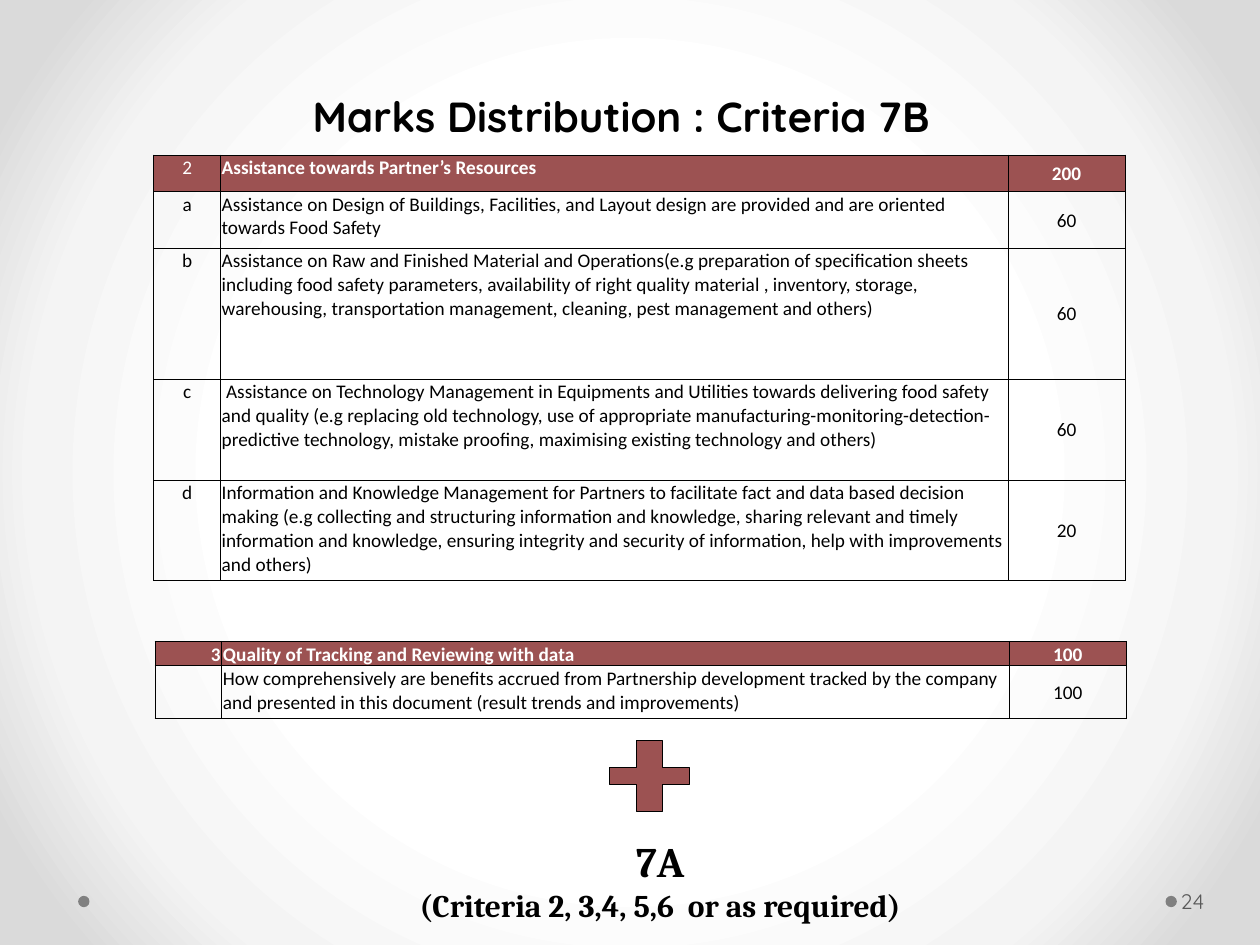
from dataclasses import dataclass
from typing import Optional

from lxml import etree
from pptx import Presentation
from pptx.dml.color import RGBColor
from pptx.enum.shapes import MSO_SHAPE
from pptx.enum.text import MSO_ANCHOR, MSO_AUTO_SIZE, PP_ALIGN
from pptx.oxml import parse_xml
from pptx.oxml.ns import nsdecls
from pptx.util import Inches, Pt

LEFT, CENTER, RIGHT = PP_ALIGN.LEFT, PP_ALIGN.CENTER, PP_ALIGN.RIGHT
TOP, MIDDLE, BOTTOM = MSO_ANCHOR.TOP, MSO_ANCHOR.MIDDLE, MSO_ANCHOR.BOTTOM
OVAL, PLUS = MSO_SHAPE.OVAL, MSO_SHAPE.CROSS
FIXED = MSO_AUTO_SIZE.NONE

BLACK = RGBColor(0x00, 0x00, 0x00)
WHITE = RGBColor(0xFF, 0xFF, 0xFF)
BRICK = RGBColor(0x9C, 0x52, 0x52)
GREY = RGBColor(0x80, 0x80, 0x80)
DARK_GREY = RGBColor(0x59, 0x59, 0x59)
BACKDROP = [(50, WHITE), (76, RGBColor(0xF4, 0xF4, 0xF4)), (92, RGBColor(0xDA, 0xDA, 0xDA))]

SLIDE_W, SLIDE_H = Inches(10), Inches(7.5)
UNIT = SLIDE_W / 100
MARK_COLS = (5.3, 62.5, 9.3)


@dataclass
class Box:
    col: float
    row: float
    cols: float
    rows: float

    def emu(self) -> list[int]:
        return [int(v * UNIT) for v in (self.col, self.row, self.cols, self.rows)]


@dataclass
class Row:
    height: float
    label: str
    text: str
    marks: str
    header: bool = False


@dataclass
class MarksTable:
    col: float
    row: float
    rows: list[Row]
    label_align: PP_ALIGN = CENTER
    header_anchors: tuple = (TOP, TOP, MIDDLE)
    label_bold: bool = False


RESOURCES = MarksTable(12.2, 12.3, [
    Row(2.9, "2", "Assistance towards Partner’s Resources", "200", True),
    Row(4.5, "a", "Assistance on Design of Buildings, Facilities, and Layout design are "
        "provided and are oriented towards Food Safety", "60"),
    Row(10.4, "b", "Assistance on Raw and Finished Material and Operations(e.g preparation of "
        "specification sheets including food safety parameters, availability of right quality "
        "material , inventory, storage, warehousing, transportation management, cleaning, pest "
        "management and others)", "60"),
    Row(8, "c", " Assistance on Technology Management in Equipments and Utilities towards "
        "delivering food safety and quality (e.g replacing old technology, use of appropriate "
        "manufacturing-monitoring-detection-predictive technology, mistake proofing, maximising "
        "existing technology and others)", "60"),
    Row(8, "d", "Information and Knowledge Management for Partners to facilitate fact and data "
        "based decision making (e.g collecting and structuring information and knowledge, sharing "
        "relevant and timely information and knowledge, ensuring integrity and security of "
        "information, help with improvements and others)", "20"),
])
TRACKING = MarksTable(12.3, 50.9, [
    Row(1.9, "3", "Quality of Tracking and Reviewing with data", "100", True),
    Row(4.2, "", "How comprehensively are benefits accrued from Partnership development tracked "
        "by the company and presented in this document (result trends and improvements)", "100"),
], RIGHT, (BOTTOM, BOTTOM, BOTTOM), True)


def write(tf, text: str, *, font: str, size: float, color: RGBColor = BLACK,
          bold: bool = False, align: PP_ALIGN = LEFT, more: bool = False) -> None:
    p = tf.add_paragraph() if more else tf.paragraphs[0]
    p.alignment = align
    r = p.add_run()
    r.text = text
    r.font.name, r.font.size, r.font.bold = font, Pt(size), bold
    r.font.color.rgb = color


def paint_background(s) -> None:
    s.background.fill.gradient()
    grad = s.background._cSld.bg.bgPr[0]
    for child in list(grad):
        grad.remove(child)
    stops = "".join(f'<a:gs pos="{pos * 1000}"><a:srgbClr val="{c}"/></a:gs>' for pos, c in BACKDROP)
    for xml in (f'<a:gsLst {nsdecls("a")}>{stops}</a:gsLst>',
                f'<a:path {nsdecls("a")} path="circle">'
                '<a:fillToRect l="50000" t="50000" r="50000" b="50000"/></a:path>'):
        grad.append(parse_xml(xml))


def add_figure(s, kind: MSO_SHAPE, box: Box, fill: RGBColor, line: Optional[RGBColor] = None):
    sp = s.shapes.add_shape(kind, *box.emu())
    sp.shadow.inherit = False
    sp.fill.solid()
    sp.fill.fore_color.rgb = fill
    if line is None:
        sp.line.fill.background()
    else:
        sp.line.color.rgb = line
        sp.line.width = Pt(0.75)
    return sp


def add_text(s, box: Box, anchor: MSO_ANCHOR = TOP):
    tf = s.shapes.add_textbox(*box.emu()).text_frame
    tf.word_wrap = True
    tf.vertical_anchor = anchor
    return tf


def outline(cell) -> None:
    tc_pr = cell._tc.get_or_add_tcPr()
    for i, side in enumerate("LRTB"):
        ln = parse_xml(f'<a:ln{side} {nsdecls("a")} w="{Pt(0.5)}"/>')
        fill = etree.SubElement(ln, ln.nsmap["a"].join("{}") + "solidFill")
        etree.SubElement(fill, ln.nsmap["a"].join("{}") + "srgbClr", val=str(BLACK))
        tc_pr.insert(i, ln)


def add_marks_table(s, spec: MarksTable) -> None:
    box = Box(spec.col, spec.row, sum(MARK_COLS), sum(r.height for r in spec.rows))
    table = s.shapes.add_table(len(spec.rows), len(MARK_COLS), *box.emu()).table
    table.first_row = table.horz_banding = False
    for column, width in zip(table.columns, MARK_COLS):
        column.width = int(width * UNIT)
    for i, row in enumerate(spec.rows):
        table.rows[i].height = int(row.height * UNIT)
        anchors = spec.header_anchors if row.header else (TOP, TOP, MIDDLE)
        bolds = (spec.label_bold, True, True) if row.header else (False,) * 3
        texts = (row.label, row.text, row.marks)
        aligns = (spec.label_align, LEFT, CENTER)
        for j, (text, align, anchor, bold) in enumerate(zip(texts, aligns, anchors, bolds)):
            cell = table.cell(i, j)
            cell.margin_left = cell.margin_right = cell.margin_top = Inches(0.01)
            cell.margin_bottom = 0
            cell.vertical_anchor = anchor
            if row.header:
                cell.fill.solid()
                cell.fill.fore_color.rgb = BRICK
            else:
                cell.fill.background()
            outline(cell)
            if text:
                write(cell.text_frame, text, font="Calibri", size=11, bold=bold, align=align,
                      color=WHITE if row.header else BLACK)


def main() -> None:
    prs = Presentation()
    prs.slide_width, prs.slide_height = SLIDE_W, SLIDE_H
    s = prs.slides.add_slide(prs.slide_layouts[5])
    paint_background(s)

    for col in (92.5, 6.2):
        add_figure(s, OVAL, Box(col, 71.1, 0.9, 0.9), GREY)
    tf = add_text(s, Box(93.4, 69.5, 6.1, 4), MIDDLE)
    tf.margin_left = Inches(0.03)
    tf.margin_right = Inches(0.05)
    write(tf, "24", font="Quicksand", size=12, color=DARK_GREY)

    add_marks_table(s, RESOURCES)
    add_marks_table(s, TRACKING)

    title = s.shapes.title
    title.left, title.top, title.width, title.height = Box(4.3, 6.7, 90, 7.1).emu()
    title.text_frame.vertical_anchor = TOP
    title.text_frame.auto_size = FIXED
    write(title.text_frame, "Marks Distribution : Criteria 7B", font="Quicksand", size=24,
          bold=True, align=CENTER)

    add_figure(s, PLUS, Box(48.4, 58.8, 6.3, 5.6), BRICK, BLACK).adjustments[0] = 0.38

    tf = add_text(s, Box(23.2, 65.8, 58.4, 8.1))
    write(tf, "7A", font="Cambria", size=24, bold=True, align=CENTER)
    write(tf, "(Criteria 2, 3,4, 5,6  or as required)", font="Cambria", size=18, bold=True,
          align=CENTER, more=True)

    prs.save("out.pptx")


if __name__ == "__main__":
    main()
